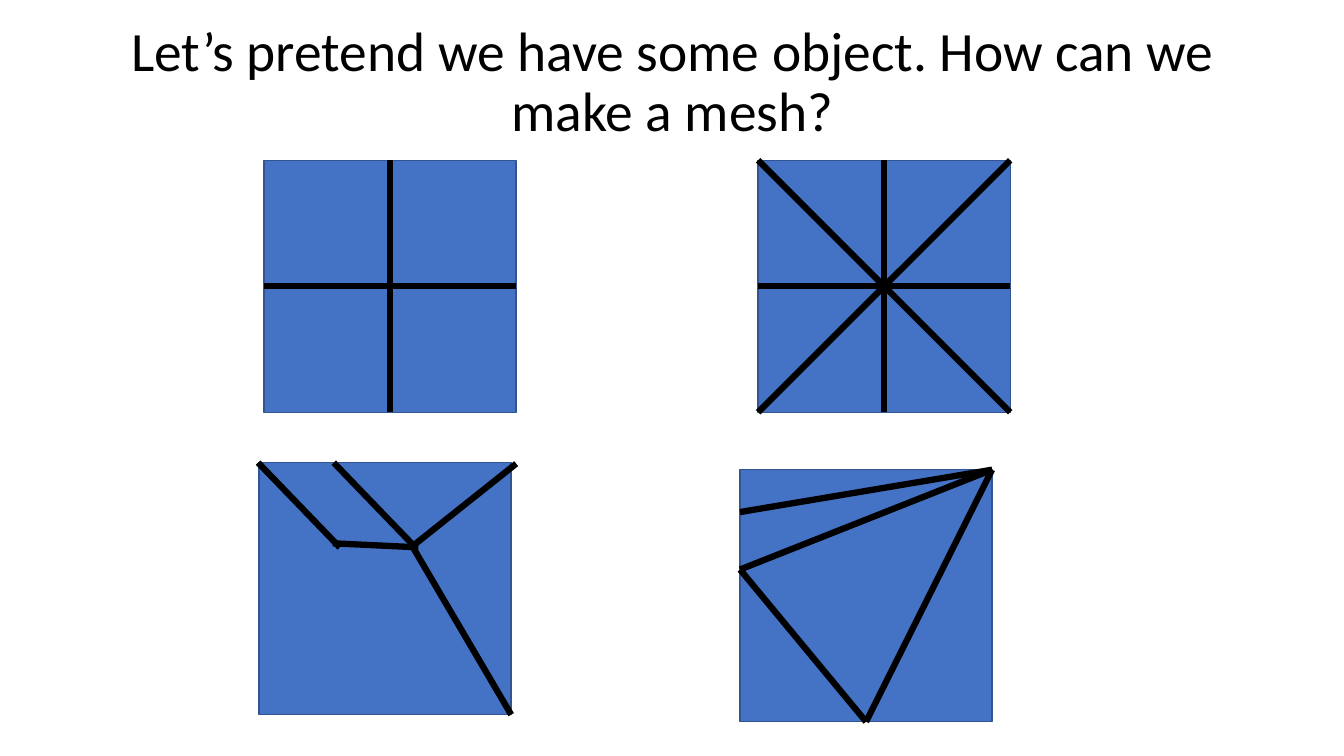
from dataclasses import dataclass

from lxml.etree import SubElement
from pptx import Presentation
from pptx.dml.color import RGBColor
from pptx.enum.shapes import MSO_CONNECTOR as Connector
from pptx.enum.shapes import MSO_SHAPE as Shape
from pptx.enum.text import MSO_ANCHOR as Anchor
from pptx.enum.text import MSO_AUTO_SIZE as AutoSize
from pptx.enum.text import PP_ALIGN as Align
from pptx.oxml.ns import qn
from pptx.slide import Slide
from pptx.util import Inches, Pt

COLORS = {"square": "4472C4", "outline": "325491", "ink": "000000"}
SIDE = 2.5
HALF = SIDE / 2

Point = tuple[float, float]
Edge = tuple[Point, Point]


@dataclass(frozen=True)
class Mesh:
    """A square and its edges, measured from the square's top left corner."""
    left: float
    top: float
    edges: tuple[Edge, ...]


TOP_LEFT, TOP_RIGHT = (0, 0), (SIDE, 0)
BOTTOM_LEFT, BOTTOM_RIGHT = (0, SIDE), (SIDE, SIDE)
BOTTOM_MIDDLE = (HALF, SIDE)
LEFT_POINT = (0, 0.99)

CROSS: tuple[Edge, ...] = (
    ((SIDE, HALF), (0, HALF)),
    ((HALF, 0), BOTTOM_MIDDLE),
)
DIAGONALS: tuple[Edge, ...] = (
    (TOP_RIGHT, BOTTOM_LEFT),
    (TOP_LEFT, BOTTOM_RIGHT),
)
IRREGULAR: tuple[Edge, ...] = (
    ((2.55, 0.01), (1.52, 0.83)),
    (BOTTOM_RIGHT, (1.52, 0.83)),
    ((1.55, 0.84), (0.74, 0)),
    ((0.8, 0.84), (-0.01, 0)),
    ((1.58, 0.84), (0.73, 0.8)),
)
FAN: tuple[Edge, ...] = (
    (TOP_RIGHT, (0, 0.42)),
    (TOP_RIGHT, LEFT_POINT),
    (TOP_RIGHT, BOTTOM_MIDDLE),
    (LEFT_POINT, BOTTOM_MIDDLE),
)

MESHES = (
    Mesh(2.62, 1.59, CROSS),
    Mesh(7.52, 1.59, CROSS + DIAGONALS),
    Mesh(2.57, 4.59, IRREGULAR),
    Mesh(7.34, 4.66, FAN),
)


def color(name: str) -> RGBColor:
    return RGBColor.from_string(COLORS[name])


def format_title(slide: Slide, text: str) -> None:
    title = slide.shapes.title
    title.left, title.top = Inches(0.92), Inches(0.4)
    title.width, title.height = Inches(11.5), Inches(1.45)
    frame = title.text_frame
    frame.text = text
    frame.word_wrap = True
    frame.auto_size = AutoSize.NONE
    frame.vertical_anchor = Anchor.MIDDLE
    frame.margin_bottom = Inches(0.65)
    para = frame.paragraphs[0]
    para.alignment = Align.CENTER
    para.line_spacing = 0.9
    para.font.name = "Calibri"
    para.font.size = Pt(39.6)
    para.font.color.rgb = color("ink")


def draw_square(slide: Slide, mesh: Mesh) -> None:
    square = slide.shapes.add_shape(
        Shape.RECTANGLE, Inches(mesh.left), Inches(mesh.top), Inches(SIDE), Inches(SIDE)
    )
    square.shadow.inherit = False
    square.fill.solid()
    square.fill.fore_color.rgb = color("square")
    square.line.color.rgb = color("outline")
    square.line.width = Pt(1)


def draw_edge(slide: Slide, mesh: Mesh, edge: Edge) -> None:
    (x1, y1), (x2, y2) = edge
    line = slide.shapes.add_connector(
        Connector.STRAIGHT,
        Inches(mesh.left + x1), Inches(mesh.top + y1),
        Inches(mesh.left + x2), Inches(mesh.top + y2),
    )
    line.line.color.rgb = color("ink")
    line.line.width = Pt(4.5)
    SubElement(line._element.spPr, qn("a:effectLst"))


def main() -> None:
    deck = Presentation()
    deck.slide_width, deck.slide_height = Inches(13.33), Inches(7.5)
    slide = deck.slides.add_slide(deck.slide_layouts[5])
    format_title(slide, "Let’s pretend we have some object. How can we make a mesh?")
    for mesh in MESHES:
        draw_square(slide, mesh)
        for edge in mesh.edges:
            draw_edge(slide, mesh, edge)
    deck.save("out.pptx")


if __name__ == "__main__":
    main()
